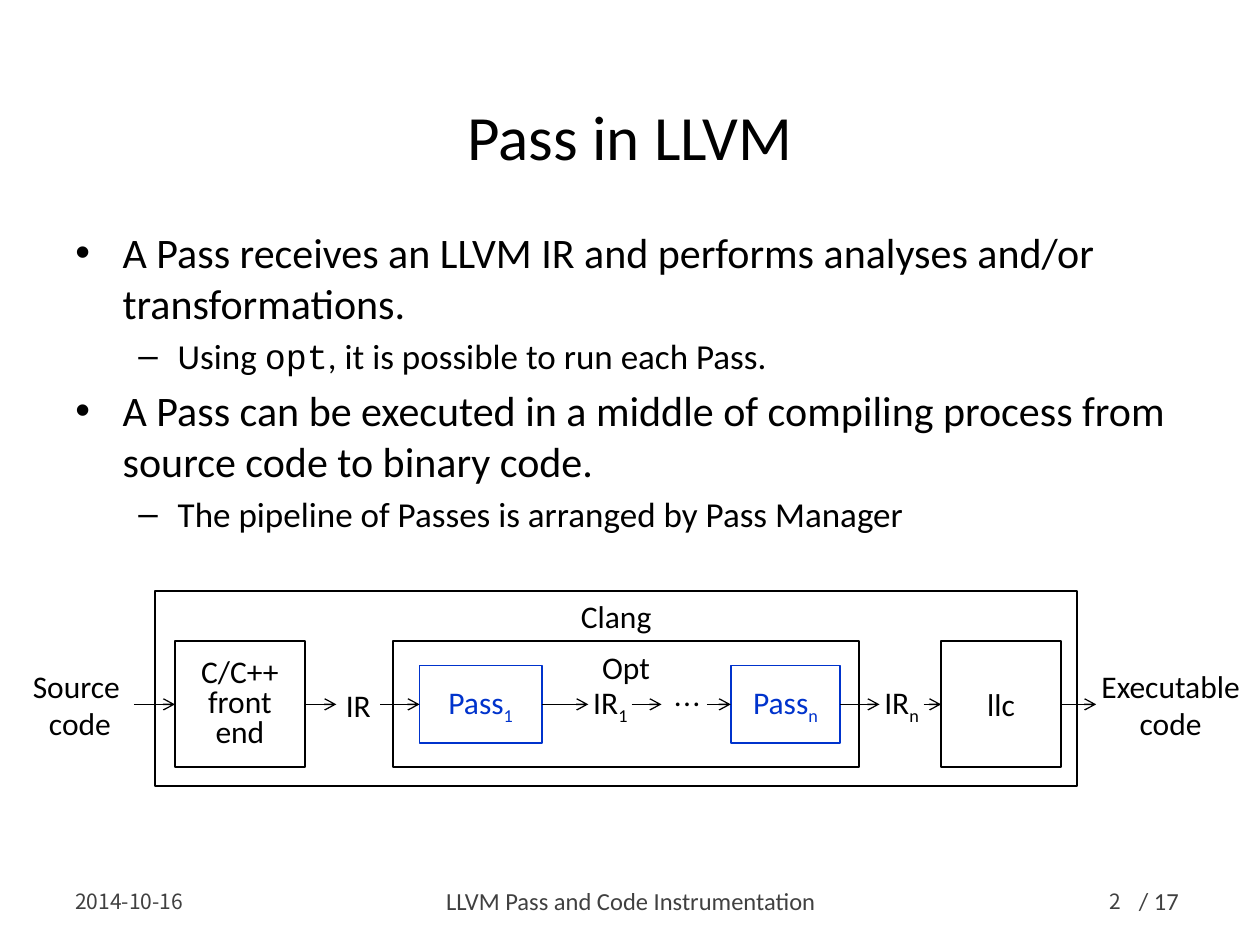
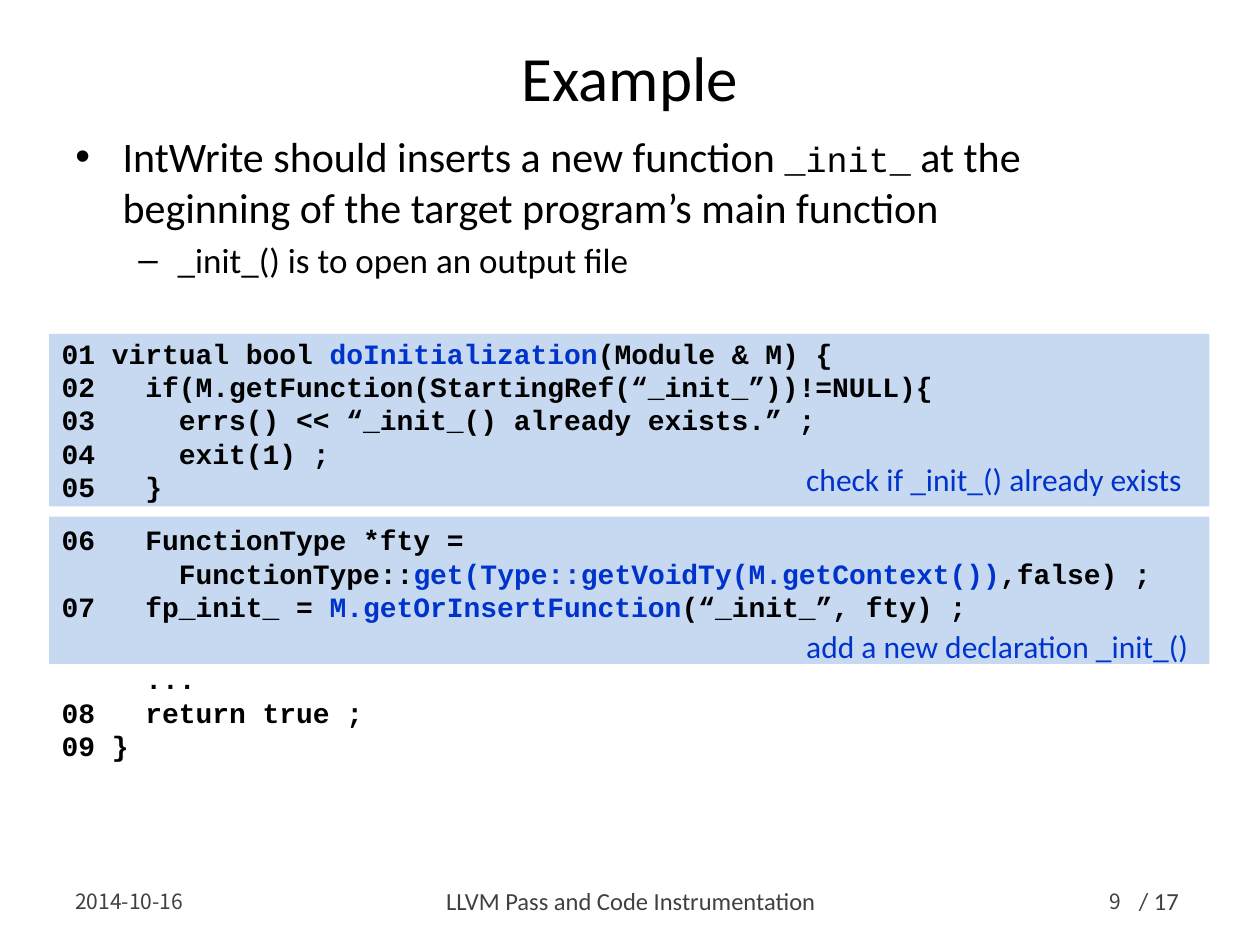
"""Build two slides on LLVM passes: the pass pipeline and a code example."""
import dataclasses

import lxml.etree
import pptx
import pptx.dml.color
import pptx.enum.shapes
import pptx.enum.text
import pptx.oxml.ns
import pptx.util

Pt = pptx.util.Pt
RGB = pptx.dml.color.RGBColor.from_string
qn = pptx.oxml.ns.qn
ALIGN = pptx.enum.text.PP_ALIGN
ANCHOR = pptx.enum.text.MSO_ANCHOR
RECT = pptx.enum.shapes.MSO_SHAPE.RECTANGLE
STRAIGHT = pptx.enum.shapes.MSO_CONNECTOR.STRAIGHT


@dataclasses.dataclass(frozen=True)
class Theme:
    black: str = "000000"
    white: str = "FFFFFF"
    blue: str = "0033CC"
    band: str = "C6D9F1"
    grey: str = "404040"
    sans: str = "Calibri"
    mono: str = "Courier New"
    cjk: str = "Noto Sans CJK KR"
    title: int = 36
    bullet: int = 24
    dash: int = 20
    label: int = 18
    code: int = 16
    footer: int = 14
    small: int = 12


T = Theme()
BLUE = {"color": T.blue}
SUB = {"sub": True}
MONO = {"font": T.mono, "size": T.dash}


def add_box(s, at, paras=(), size=T.label, font=T.sans, color=T.black, bold=False,
            align=ALIGN.LEFT, anchor=ANCHOR.TOP, side=7.2, fill=None, line=None):
    at = [Pt(v) for v in at]
    if fill or line:
        sp = s.shapes.add_shape(RECT, *at)
        sp.shadow.inherit = False
        if fill:
            sp.fill.solid()
            sp.fill.fore_color.rgb = RGB(fill)
        else:
            sp.fill.background()
        if line:
            sp.line.color.rgb = RGB(line)
            sp.line.width = Pt(1)
        else:
            sp.line.fill.background()
    else:
        sp = s.shapes.add_textbox(*at)
    tf = sp.text_frame
    tf.word_wrap = True
    tf.vertical_anchor = anchor
    tf.margin_left = tf.margin_right = Pt(side)
    for i, runs in enumerate(paras):
        p = tf.add_paragraph() if i else tf.paragraphs[0]
        p.alignment = align
        for text, style in runs:
            for j, part in enumerate(text.split("\n")):
                if j:
                    p.add_line_break()
                r = p.add_run()
                r.text = part
                r.font.name = style.get("font", font)
                r.font.size = Pt(style.get("size", size))
                r.font.bold = bold
                r.font.color.rgb = RGB(style.get("color", color))
                if "sub" in style:
                    r._r.get_or_add_rPr().set("baseline", "-25000")
    return sp


prs = pptx.Presentation()
prs.slide_width, prs.slide_height = Pt(720), Pt(540)

pages = [
    ("2", "Pass in LLVM", (36, 32.4, 648, 90), (36, 126, 648, 195), [
        (0, [("A Pass receives an LLVM IR and performs analyses and/or transformations.", {})]),
        (1, [("Using ", {}), ("opt", MONO), (", it is possible to run each Pass.", {})]),
        (0, [("A Pass can be executed in a middle of compiling process from "
              "source code to binary code.", {})]),
        (1, [("The pipeline of Passes is arranged by Pass Manager", {})]),
    ]),
    ("9", "Example", (36, 15.1, 648, 57), (36, 71.3, 648, 116), [
        (0, [("IntWrite should inserts a new function ", {}), ("_init_", MONO),
             (" at the beginning of the target program’s main function", {})]),
        (1, [("_init_() is to open an output file", {})]),
    ]),
]
levels = [("•", T.bullet, 27, 27), ("–", T.dash, 58.5, 22.5)]

for number, title, title_at, body_at, bullets in pages:
    s = prs.slides.add_slide(prs.slide_layouts[5])
    sp = s.shapes.title
    sp.left, sp.top, sp.width, sp.height = [Pt(v) for v in title_at]
    tf = sp.text_frame
    tf.text = title
    tf.vertical_anchor = ANCHOR.MIDDLE
    p = tf.paragraphs[0]
    p.alignment = ALIGN.CENTER
    r = p.runs[0]
    r.font.name, r.font.size = T.sans, Pt(T.title)
    r.font.color.rgb = RGB(T.black)

    paras = [[(text, {"size": levels[level][1], **style}) for text, style in runs]
             for level, runs in bullets]
    sp = add_box(s, body_at, paras)
    for p, (level, runs) in zip(sp.text_frame.paragraphs, bullets):
        mark, size, left, hang = levels[level]
        p.level = level
        p.space_before = Pt(size * 0.2)
        pPr = p._p.get_or_add_pPr()
        pPr.set("marL", str(Pt(left)))
        pPr.set("indent", str(-Pt(hang)))
        lxml.etree.SubElement(pPr, qn("a:buFont")).set("typeface", "Arial")
        lxml.etree.SubElement(pPr, qn("a:buChar")).set("char", mark)

    for left, top, width, text, font, size, align in [
        (36, 500.4, 80, "2014-10-16", T.cjk, T.small, ALIGN.LEFT),
        (116, 500.4, 489, "LLVM Pass and Code Instrumentation", T.sans, T.footer, ALIGN.CENTER),
        (615, 500.4, 33, number, T.cjk, T.small, ALIGN.RIGHT),
        (643.7, 500.4, 60, "/ 17", T.sans, T.footer, ALIGN.LEFT),
    ]:
        add_box(s, (left, top, width, 28.8), [[(text, {})]], size, font, T.grey,
                align=align, anchor=ANCHOR.MIDDLE)

pipeline, example = prs.slides

axis = 402.5
for left, width, height, paras, color, side in [
    (100, 74.2, 72, [[("C/C++", {})], [("front", {})], [("end", {})]], T.black, 0),
    (239.8, 69.8, 44.6, [[("Pass", {}), ("1", SUB)]], T.blue, 7.2),
    (417.6, 62.6, 44.6, [[("Pass", {}), ("n", SUB)]], T.blue, 7.2),
    (537.8, 68.4, 72, [[("llc", {})]], T.black, 7.2),
]:
    sp = add_box(pipeline, (left, axis - height / 2, width, height), paras, color=color,
                 align=ALIGN.CENTER, anchor=ANCHOR.MIDDLE, side=side, fill=T.white, line=color)
    if len(paras) > 1:
        for p in sp.text_frame.paragraphs:
            p.line_spacing = 0.8

for left, width, runs in [
    (14.4, 62.6, [("Source \ncode", {})]),
    (192.2, 25.2, [("IR", {})]),
    (336.2, 25.2, [("IR", {}), ("1", SUB)]),
    (502.6, 25.2, [("IR", {}), ("n", SUB)]),
    (626.4, 85, [("Executable code", {})]),
]:
    add_box(pipeline, (left, axis - 32.75, width, 65.5), [runs],
            align=ALIGN.CENTER, anchor=ANCHOR.MIDDLE, side=0)
add_box(pipeline, (378, 389.5, 26, 26.6), [[("…", {})]], T.code, T.cjk)

for start, end in [(76.5, 100), (174.2, 192.2), (217.4, 239.8), (309.6, 336.2), (361, 378),
                   (404, 417.6), (480.2, 502.6), (527.8, 537.8), (606.2, 626.4)]:
    c = pipeline.shapes.add_connector(STRAIGHT, Pt(start), Pt(axis), Pt(end), Pt(axis))
    c.line.color.rgb = RGB(T.black)
    c.line.width = Pt(0.75)
    lxml.etree.SubElement(c.line._get_or_add_ln(), qn("a:tailEnd")).set("type", "arrow")
    lxml.etree.SubElement(c._element.spPr, qn("a:effectLst"))

for at, name, side in [((224.6, 366.5, 266.4, 72), "Opt", 7.2),
                       ((88.6, 337.7, 527, 111.6), "Clang", 0)]:
    add_box(pipeline, at, [[(name, {})]], align=ALIGN.CENTER, side=side, line=T.black)

for top, height in [(190.8, 98.6), (295.2, 84.2)]:
    add_box(example, (28.1, top, 663, height), fill=T.band)

code = [
    [("01 virtual bool ", {}), ("doInitialization", BLUE), ("(Module & M) {", {})],
    [("02   if(M.getFunction(StartingRef(“_init_”))!=NULL){", {})],
    [("03     errs() << “_init_() already exists.” ;", {})],
    [("04     exit(1) ;", {})],
    [("05   }", {})],
    [("06   FunctionType *fty =\n       FunctionType::", {}),
     ("get(Type::getVoidTy(M.getContext())", BLUE), (",false) ;", {})],
    [("07   fp_init_ = ", {}), ("M.getOrInsertFunction", BLUE), ("(“_init_”, fty) ;", {})],
    [("     ...", {})],
    [("08   return true ;", {})],
    [("09 }", {})],
]
sp = add_box(example, (28.1, 188.6, 663, 282), code, T.code, T.mono, bold=True)
for p in sp.text_frame.paragraphs:
    p.line_spacing = Pt(19.1)
for row, gap in [(5, 11.3), (7, 22)]:
    sp.text_frame.paragraphs[row].space_before = Pt(gap)

for top, note in [(259.2, "check if _init_() already exists"),
                  (355, "add a new declaration _init_()")]:
    add_box(example, (453.6, top, 250, 28.8), [[(note, {})]], color=T.blue)

prs.save("out.pptx")
